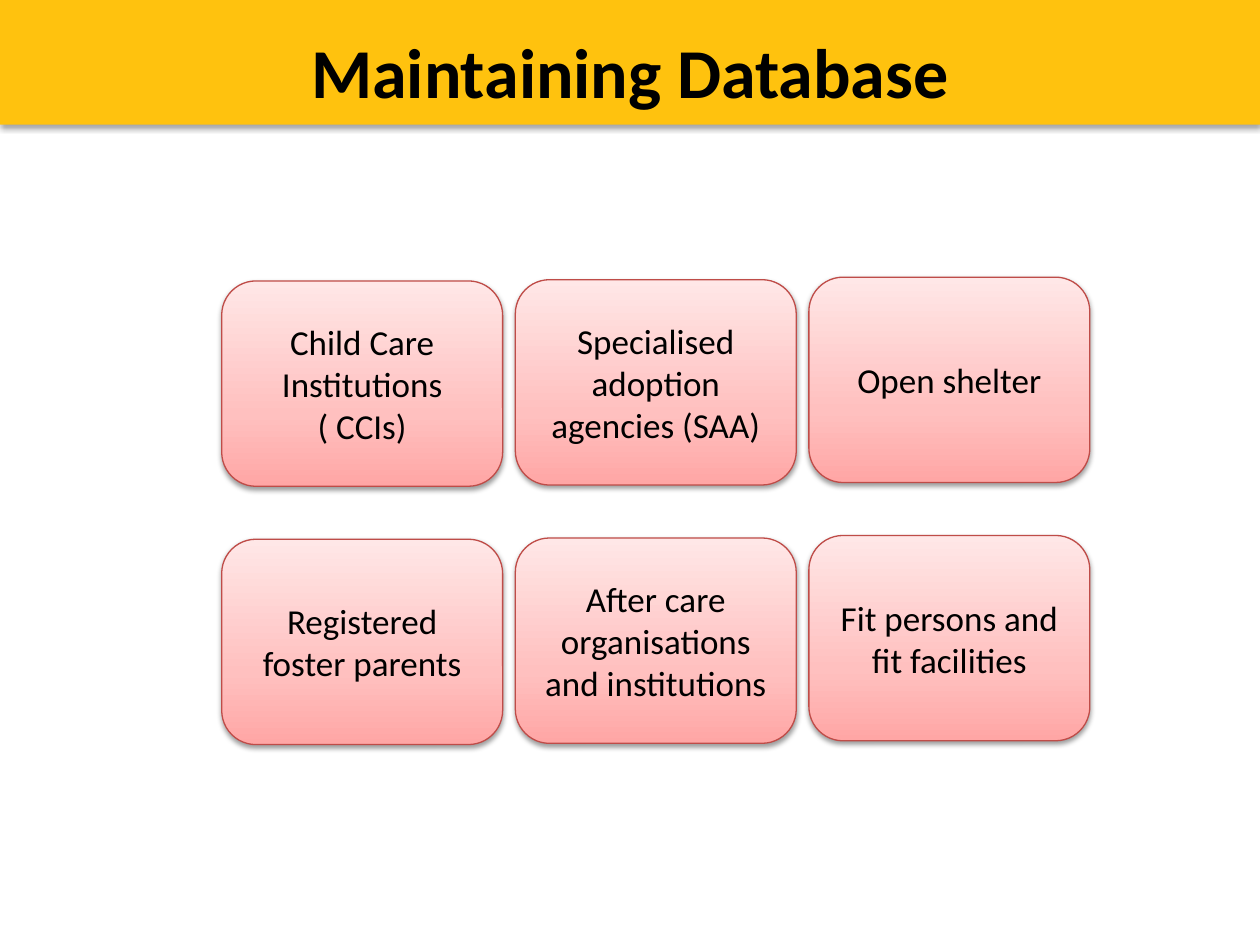
from lxml.etree import SubElement
from pptx import Presentation
from pptx.dml.color import RGBColor
from pptx.enum.shapes import MSO_SHAPE as SHAPE
from pptx.enum.text import MSO_ANCHOR as ANCHOR, PP_ALIGN as ALIGN
from pptx.oxml import parse_xml
from pptx.oxml.ns import nsdecls, qn
from pptx.util import Inches, Pt

TITLE = "Maintaining Database"
CARDS = [
    ["Child Care Institutions ( CCIs)", "Specialised adoption agencies (SAA)", "Open shelter"],
    ["Registered foster parents", "After care organisations and institutions",
     "Fit persons and fit facilities"],
]

THEME = {
    "font": "Calibri", "title_size": 40, "card_size": 20,
    "text": "000000", "shadow": "000000", "band": "FFC20E", "card_line": "BF4C48",
    "card_stops": [(0, "FFA6A5"), (35, "FFC0BF"), (100, "FFE7E7")],
}

CARD_W, CARD_H = 2.23, 1.63
CARD_LEFT, COLUMN_STEP = 1.76, 2.33
COLUMN_TOPS = [2.23, 2.22, 2.2]
ROW_STEP = 2.05


def write_text(shape, text, size, bold=False, anchor=ANCHOR.MIDDLE):
    tf = shape.text_frame
    tf.word_wrap = True
    tf.vertical_anchor = anchor
    p = tf.paragraphs[0]
    p.alignment = ALIGN.CENTER
    r = p.add_run()
    r.text = text
    r.font.name = THEME["font"]
    r.font.size = Pt(size)
    r.font.bold = bold
    r.font.color.rgb = RGBColor.from_string(THEME["text"])


def add_shadow(sp, opacity, blur, distance):
    """Cast a shadow straight down; blur and distance are in points."""
    sp.shadow.inherit = False
    effects = sp._element.spPr.find(qn("a:effectLst"))
    shadow = SubElement(effects, qn("a:outerShdw"), blurRad=str(Pt(blur)),
                        dist=str(Pt(distance)), dir="5400000", rotWithShape="0")
    color = SubElement(shadow, qn("a:srgbClr"), val=THEME["shadow"])
    SubElement(color, qn("a:alpha"), val=str(opacity * 1000))


def fill_upward(sp, stops):
    """Fill with a gradient whose first stop is at the bottom edge."""
    marks = "".join(f'<a:gs pos="{pos * 1000}"><a:srgbClr val="{color}"/></a:gs>'
                    for pos, color in stops)
    gradient = parse_xml(f'<a:gradFill {nsdecls("a")} rotWithShape="1"><a:gsLst>{marks}</a:gsLst>'
                         '<a:lin ang="16200000" scaled="0"/></a:gradFill>')
    sp._element.spPr.find(qn("a:prstGeom")).addnext(gradient)


def add_header(slide):
    band = slide.shapes.add_shape(SHAPE.RECTANGLE, 0, 0, Inches(10), Inches(0.99))
    band.fill.solid()
    band.fill.fore_color.rgb = RGBColor.from_string(THEME["band"])
    band.line.fill.background()
    add_shadow(band, opacity=35, blur=3.1, distance=1.8)
    title = slide.shapes.add_textbox(0, Inches(0.15), Inches(10), Inches(0.67))
    title.text_frame.margin_top = Inches(0.08)
    write_text(title, TITLE, THEME["title_size"], bold=True, anchor=ANCHOR.TOP)


def add_card(slide, text, left, top):
    sp = slide.shapes.add_shape(SHAPE.ROUNDED_RECTANGLE, Inches(left), Inches(top),
                                Inches(CARD_W), Inches(CARD_H))
    fill_upward(sp, THEME["card_stops"])
    sp.line.color.rgb = RGBColor.from_string(THEME["card_line"])
    sp.line.width = Pt(0.75)
    add_shadow(sp, opacity=38, blur=3.1, distance=1.6)
    write_text(sp, text, THEME["card_size"])


def main():
    prs = Presentation()
    prs.slide_width, prs.slide_height = Inches(10), Inches(7.5)
    slide = prs.slides.add_slide(prs.slide_layouts[6])
    add_header(slide)
    for row, texts in enumerate(CARDS):
        for column, (text, top) in enumerate(zip(texts, COLUMN_TOPS)):
            add_card(slide, text, CARD_LEFT + column * COLUMN_STEP, top + row * ROW_STEP)
    prs.save("out.pptx")


if __name__ == "__main__":
    main()
